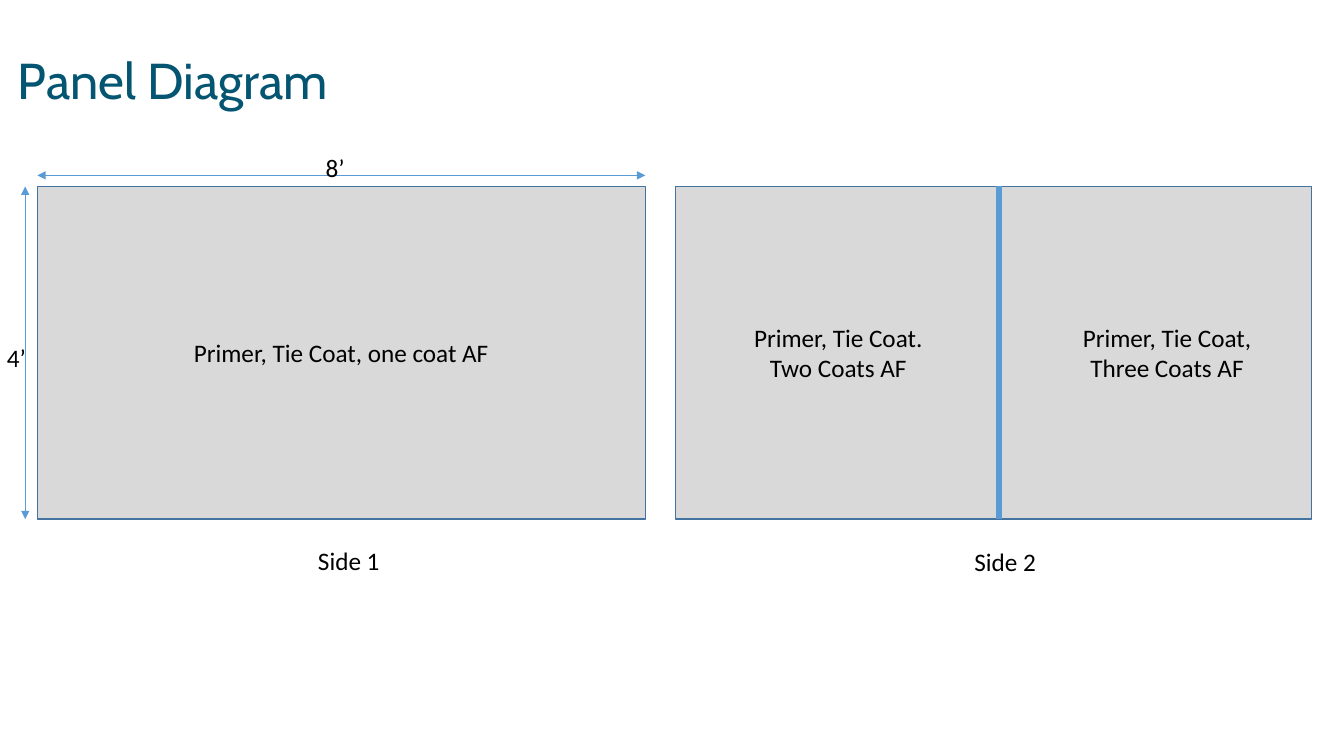
from lxml import etree
from pptx import Presentation
from pptx import util as u
from pptx.dml.color import RGBColor
from pptx.enum import shapes, text
from pptx.oxml import ns

WIDTH, HEIGHT = 13.33, 7.5
PANEL_TOP, PANEL_HEIGHT = 1.85, 3.3
SIDE_1 = (0.37, PANEL_TOP, 6.03, PANEL_HEIGHT)
SIDE_2 = (6.7, PANEL_TOP, 6.31, PANEL_HEIGHT)
LEFT, CENTER = text.PP_ALIGN.LEFT, text.PP_ALIGN.CENTER
BLUE, BLACK = "5B9BD5", "000000"


def color(value):
    return RGBColor.from_string(value)


def inches(*lengths):
    return [u.Inches(length) for length in lengths]


def write(frame, lines, size=18, font="Calibri", ink=BLACK):
    """Fill a frame with (wording, alignment) lines."""
    for index, (wording, align) in enumerate(lines):
        para = frame.add_paragraph() if index else frame.paragraphs[0]
        para.alignment = align
        span = para.add_run()
        span.text = wording
        span.font.size = u.Pt(size)
        span.font.name = font
        span.font.color.rgb = color(ink)


def add_title(page, box, wording):
    frame = page.shapes.add_textbox(*inches(*box)).text_frame
    frame.word_wrap = True
    frame.vertical_anchor = text.MSO_ANCHOR.BOTTOM
    write(frame, [(wording, LEFT)], 36, "Cabin", "045571")
    frame.paragraphs[0].line_spacing = 0.9


def add_label(page, box, lines):
    frame = page.shapes.add_textbox(*inches(*box)).text_frame
    frame.word_wrap = False
    frame.auto_size = text.MSO_AUTO_SIZE.SHAPE_TO_FIT_TEXT
    write(frame, lines)


def add_line(page, start, end, weight, arrows=False):
    line = page.shapes.add_connector(
        shapes.MSO_CONNECTOR.STRAIGHT, *inches(*start, *end))
    line.line.color.rgb = color(BLUE)
    line.line.width = u.Pt(weight)
    if arrows:
        outline = line.line._get_or_add_ln()
        for tag in ("a:headEnd", "a:tailEnd"):
            etree.SubElement(outline, ns.qn(tag), type="triangle")
    etree.SubElement(line._element.spPr, ns.qn("a:effectLst"))


def add_panel(page, box, caption, caption_shift, caption_drop):
    """Draw a grey panel with its caption below; return the panel."""
    left, top, width, height = box
    panel = page.shapes.add_shape(
        shapes.MSO_SHAPE.RECTANGLE, *inches(*box))
    panel.shadow.inherit = False
    panel.fill.solid()
    panel.fill.fore_color.rgb = color("D9D9D9")
    panel.line.color.rgb = color("43739E")
    panel.line.width = u.Pt(1)
    caption_left = left + width / 2 - 0.41 + caption_shift
    add_label(page, (caption_left, top + height + caption_drop, 0.82, 0.4),
              [(caption, LEFT)])
    return panel


def add_dimensions(page, box, across, down):
    """Measure a panel with arrows above it and to its left."""
    left, top, width, height = box
    above, beside = top - 0.11, left - 0.12
    add_line(page, (left, above), (left + width, above), 0.5, True)
    add_line(page, (beside, top), (beside, top + height), 0.5, True)
    add_label(page, (left + 2.76, above - 0.28, 0.39, 0.4), [(across, LEFT)])
    add_label(page, (beside - 0.28, top + 1.5, 0.39, 0.4), [(down, LEFT)])


def add_side_1(page, box):
    panel = add_panel(page, box, "Side 1", 0.08, 0.21)
    panel.text_frame.vertical_anchor = text.MSO_ANCHOR.MIDDLE
    write(panel.text_frame, [("Primer, Tie Coat, one coat AF", CENTER)])
    add_dimensions(page, box, "8’", "4’")


def add_side_2(page, box):
    left, top, width, height = box
    add_panel(page, box, "Side 2", 0.12, 0.22)
    divider = left + 3.21
    add_line(page, (divider, top), (divider, top + height), 4.5)
    add_label(page, (left + 0.68, top + 1.3, 1.95, 0.71),
              [("Primer, Tie Coat.", LEFT), ("Two Coats AF", CENTER)])
    add_label(page, (divider + 0.72, top + 1.3, 1.89, 0.71),
              [("Primer, Tie Coat,", CENTER), ("Three Coats AF", CENTER)])


def main():
    deck = Presentation()
    deck.slide_width, deck.slide_height = inches(WIDTH, HEIGHT)
    page = deck.slides.add_slide(deck.slide_layouts[6])
    add_title(page, (0.08, 0.23, 11.5, 0.91), "Panel Diagram")
    add_side_1(page, SIDE_1)
    add_side_2(page, SIDE_2)
    deck.save("out.pptx")


if __name__ == "__main__":
    main()
